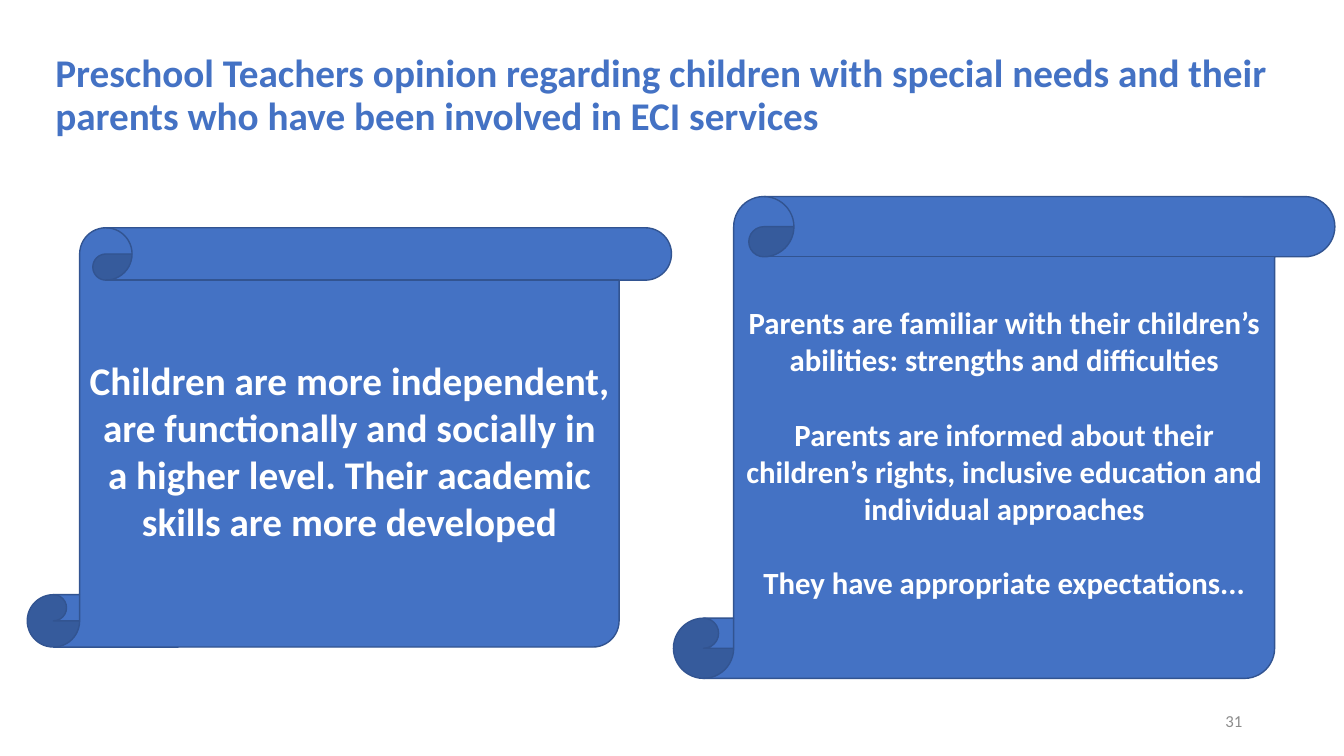
from pptx import Presentation
from pptx.dml.color import RGBColor
from pptx.enum.shapes import MSO_SHAPE
from pptx.enum.text import MSO_ANCHOR, PP_ALIGN
from pptx.util import Inches, Pt

SCROLL = MSO_SHAPE.VERTICAL_SCROLL
MIDDLE = MSO_ANCHOR.MIDDLE
LEFT, CENTER, RIGHT = PP_ALIGN.LEFT, PP_ALIGN.CENTER, PP_ALIGN.RIGHT
BLUE, EDGE, WHITE, GRAY = "4472C4", "325491", "FFFFFF", "8C8C8C"

TITLE = ("Preschool Teachers opinion regarding children with special needs "
         "and their parents who have been involved in ECI services")
CHILDREN = ["Children are more independent, are functionally and socially in "
            "a higher level. Their academic skills are more developed"]
PARENTS = [
    "Parents are familiar with their children’s abilities: strengths and difficulties",
    "Parents are informed about their children’s rights, inclusive education "
    "and individual approaches",
    "They have appropriate expectations...",
]
SCROLLS = [
    ((0.27, 2.26, 6.39, 4.16), CHILDREN, 28),
    ((6.68, 1.95, 6.56, 4.78), PARENTS, 22),
]


def color(hex_string):
    """Return the colour for a hex string."""
    return RGBColor.from_string(hex_string)


def write(frame, lines, align, ink, size, bold=True, spacing=1.0, gap=0):
    """Fill a text frame with one paragraph per line, set apart by gap points."""
    frame.word_wrap = True
    frame.vertical_anchor = MIDDLE
    for index, line in enumerate(lines):
        paragraph = frame.paragraphs[0] if index == 0 else frame.add_paragraph()
        paragraph.alignment = align
        paragraph.line_spacing = spacing
        paragraph.space_before = Pt(gap if index else 0)
        run = paragraph.add_run()
        run.text = line
        for attribute, value in {"name": "Calibri", "size": Pt(size), "bold": bold}.items():
            setattr(run.font, attribute, value)
        run.font.color.rgb = color(ink)


def add_label(slide, box, line, align, ink, size, **formats):
    """Place a single line of text or a heading in the box."""
    label = slide.shapes.add_textbox(*map(Inches, box))
    write(label.text_frame, [line], align, ink, size, **formats)


def add_scroll(slide, box, lines, size):
    """Place a scroll with centred statements, one empty line height apart."""
    scroll = slide.shapes.add_shape(SCROLL, *map(Inches, box))
    scroll.shadow.inherit = False
    scroll.fill.solid()
    scroll.fill.fore_color.rgb = color(BLUE)
    scroll.line.color.rgb = color(EDGE)
    scroll.line.width = Pt(1)
    write(scroll.text_frame, lines, CENTER, WHITE, size, gap=round(size * 1.22, 1))


def main():
    """Build the slide and save it."""
    deck = Presentation()
    deck.slide_width, deck.slide_height = Inches(13.33), Inches(7.5)
    slide = deck.slides.add_slide(deck.slide_layouts[6])
    add_label(slide, (0.45, 0.3, 12.45, 1.31), TITLE, LEFT, BLUE, 28, spacing=0.9)
    for box, lines, size in SCROLLS:
        add_scroll(slide, box, lines, size)
    add_label(slide, (9.42, 6.95, 3, 0.4), "31", RIGHT, GRAY, 12, bold=False)
    deck.save("out.pptx")


if __name__ == "__main__":
    main()
